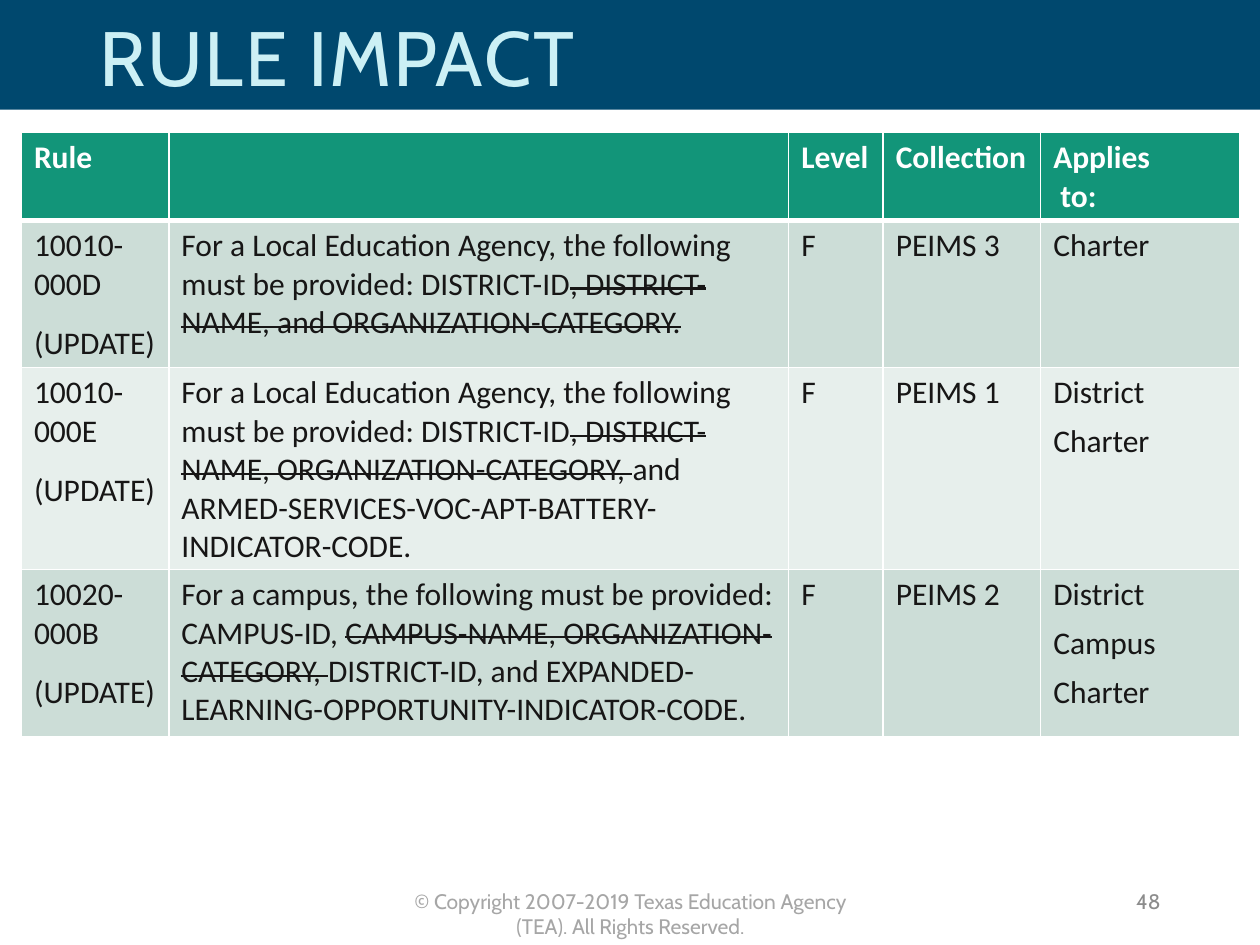
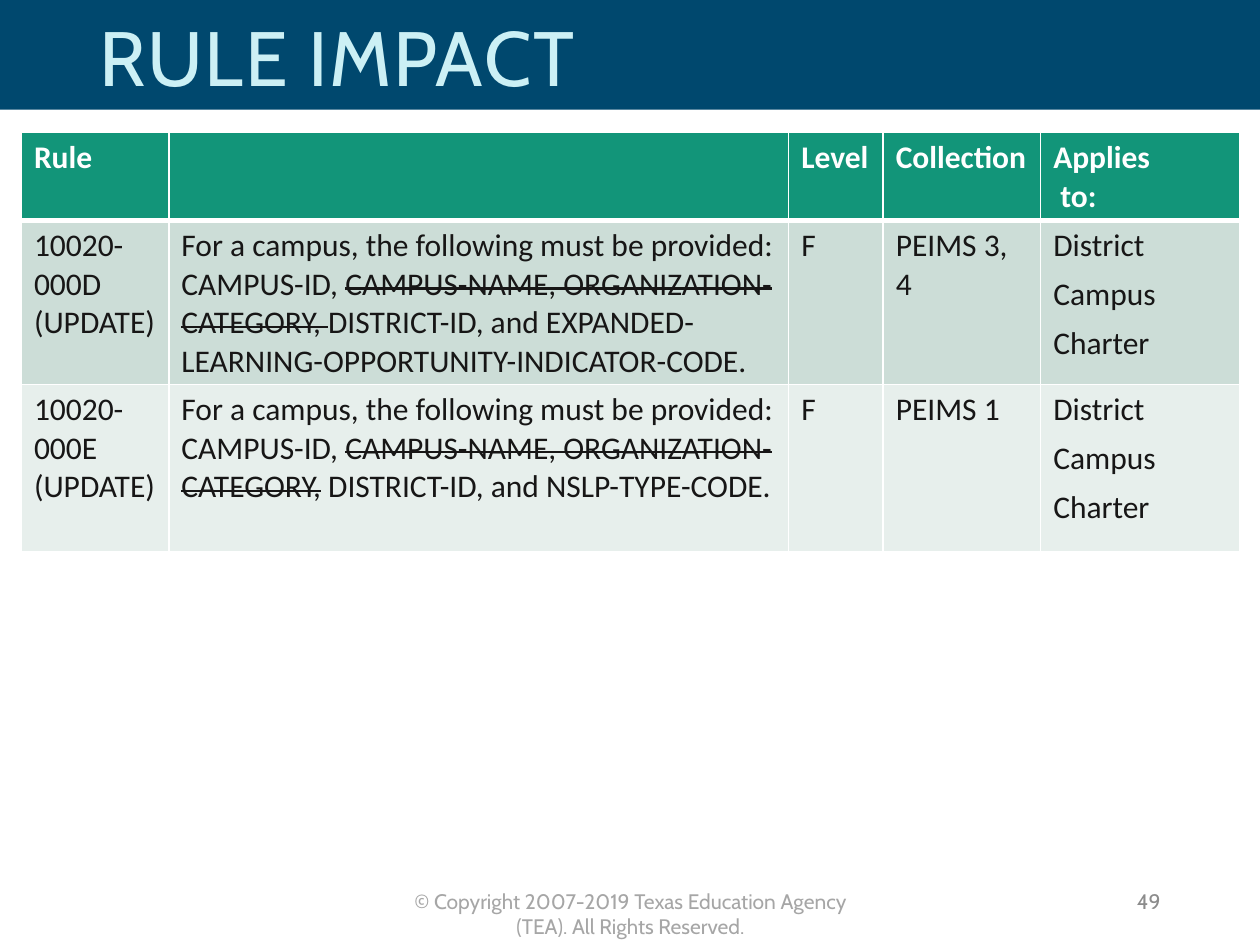
from lxml import etree
from pptx import Presentation
from pptx.dml.color import RGBColor
from pptx.enum import shapes, text
from pptx.oxml import ns
from pptx.util import Inches, Pt

COLORS = {
    "band": "00486E", "title": "CCF0F5", "header": "129579", "white": "FFFFFF",
    "body": "171616", "odd_row": "CCDDD7", "even_row": "E7EFEC",
    "copyright": "A6A6A6", "number": "8C8C8C",
}
DISPLAY_FONT, TABLE_FONT = "Cabin", "Calibri"

# Boxes are left, top, width, height in inches
BAND_BOX = (0, 0, 10, 0.87)
TITLE_BOX = (0.69, 0.05, 8, 0.87)
COPYRIGHT_BOX = (3.04, 7, 3.93, 0.3)
NUMBER_BOX = (7.06, 6.95, 2.25, 0.4)
TABLE_BOX = (0.17, 1.05, 9.67)
COLUMN_WIDTHS = (1.17, 4.92, 0.75, 1.25, 1.58)
HEADER_HEIGHT = 0.57

TITLE = "RULE IMPACT"
COPYRIGHT = "© Copyright 2007-2019 Texas Education Agency (TEA). All Rights Reserved."
HEADERS = ("Rule", "", "Level", "Collection", "Applies\n to:")

# Text between ~ marks is struck through; each newline starts a paragraph
AGENCY = "For a Local Education Agency, the following must be provided: DISTRICT-ID"
CAMPUS = "For a campus, the following must be provided: CAMPUS-ID, "
EXPANDED = (CAMPUS + "~CAMPUS-NAME, ORGANIZATION-CATEGORY, ~DISTRICT-ID, and "
            "EXPANDED-LEARNING-OPPORTUNITY-INDICATOR-CODE.")
ALL_LEVELS = "District\nCampus\nCharter"

# Each slide: number, space around the rule's paragraphs, row heights, rows
SLIDES = (
    (48, 6, (1.05, 1.33, 1.33), (
        ("10010-000D\n(UPDATE)",
         AGENCY + "~, DISTRICT-NAME, and ORGANIZATION-CATEGORY.~",
         "F", "PEIMS 3", "Charter"),
        ("10010-000E\n(UPDATE)",
         AGENCY + "~, DISTRICT-NAME, ORGANIZATION-CATEGORY, ~and "
         "ARMED-SERVICES-VOC-APT-BATTERY-INDICATOR-CODE.",
         "F", "PEIMS 1", "District\nCharter"),
        ("10020-000B\n(UPDATE)", EXPANDED, "F", "PEIMS 2", ALL_LEVELS),
    )),
    (49, 0, (1.05, 1.33), (
        ("10020-000D\n(UPDATE)", EXPANDED, "F", "PEIMS 3, 4", ALL_LEVELS),
        ("10020-000E\n(UPDATE)",
         CAMPUS + "~CAMPUS-NAME, ORGANIZATION-CATEGORY,~ DISTRICT-ID, and NSLP-TYPE-CODE.",
         "F", "PEIMS 1", ALL_LEVELS),
    )),
)


def rgb(name):
    return RGBColor.from_string(COLORS[name])


def write_text(frame, content, *, size, font, color, bold=False, align=None,
               before=0, after=0, line_spacing=None, tracking=None):
    """Fill a text frame, one paragraph per line."""
    for index, line in enumerate(content.split("\n")):
        paragraph = frame.add_paragraph() if index else frame.paragraphs[0]
        paragraph.alignment = align
        paragraph.space_before = Pt(before if index else 0)
        paragraph.space_after = Pt(after)
        if line_spacing:
            paragraph.line_spacing = line_spacing
        for position, piece in enumerate(line.split("~")):
            if not piece:
                continue
            run = paragraph.add_run()
            run.text = piece
            run.font.size, run.font.name, run.font.bold = Pt(size), font, bold
            run.font.color.rgb = rgb(color)
            properties = run._r.get_or_add_rPr()
            if position % 2:
                properties.set("strike", "sngStrike")
            if tracking:
                properties.set("spc", str(tracking * 100))


def add_text(slide, box, content, *, anchor=text.MSO_ANCHOR.TOP, grow=False, **style):
    frame = slide.shapes.add_textbox(*map(Inches, box)).text_frame
    frame.word_wrap = True
    frame.vertical_anchor = anchor
    if grow:
        frame.auto_size = text.MSO_AUTO_SIZE.SHAPE_TO_FIT_TEXT
    write_text(frame, content, font=DISPLAY_FONT, **style)


def add_title_band(slide, band_box, title_box):
    band = slide.shapes.add_shape(shapes.MSO_SHAPE.RECTANGLE, *map(Inches, band_box))
    band.shadow.inherit = False
    band.fill.solid()
    band.fill.fore_color.rgb = rgb("band")
    band.line.fill.background()
    add_text(slide, title_box, TITLE, size=44, color="title", tracking=1,
             line_spacing=0.9, anchor=text.MSO_ANCHOR.MIDDLE)


def add_footer(slide, copyright_box, number_box, number):
    add_text(slide, copyright_box, COPYRIGHT, size=12, color="copyright",
             align=text.PP_ALIGN.CENTER, grow=True)
    add_text(slide, number_box, str(number), size=12, color="number",
             align=text.PP_ALIGN.RIGHT, anchor=text.MSO_ANCHOR.MIDDLE)


def format_cell(cell, fill, top=1, bottom=1):
    """Draw white borders, then the fill, in the order the schema asks for."""
    properties = cell._tc.get_or_add_tcPr()
    for side, width in (("L", 1), ("R", 1), ("T", top), ("B", bottom)):
        line = etree.SubElement(properties, ns.qn(f"a:ln{side}"), w=str(Pt(width)))
        solid = etree.SubElement(line, ns.qn("a:solidFill"))
        etree.SubElement(solid, ns.qn("a:srgbClr"), val=COLORS["white"])
    cell.fill.solid()
    cell.fill.fore_color.rgb = rgb(fill)


def add_rule_table(slide, box, row_heights, rows, rule_space):
    heights = (HEADER_HEIGHT, *row_heights)
    left, top, width = box
    table = slide.shapes.add_table(
        len(heights), len(COLUMN_WIDTHS),
        *map(Inches, (left, top, width, sum(heights)))).table
    table.horz_banding = False
    for column, column_width in zip(table.columns, COLUMN_WIDTHS):
        column.width = Inches(column_width)
    for row, height in zip(table.rows, heights):
        row.height = Inches(height)

    # Header row
    for cell, label in zip(table.rows[0].cells, HEADERS):
        format_cell(cell, "header", bottom=3)
        write_text(cell.text_frame, label, size=18, font=TABLE_FONT,
                   color="white", bold=True)

    # Banded rule rows
    for row_index, values in enumerate(rows, start=1):
        fill = "odd_row" if row_index % 2 else "even_row"
        for column_index, value in enumerate(values):
            cell = table.cell(row_index, column_index)
            format_cell(cell, fill, top=3 if row_index == 1 else 1)
            is_rule = column_index == 0
            write_text(cell.text_frame, value, size=18, font=TABLE_FONT, color="body",
                       before=rule_space if is_rule else 0,
                       after=rule_space if is_rule else 6)


def add_rule_slide(presentation, number, rule_space, row_heights, rows):
    slide = presentation.slides.add_slide(presentation.slide_layouts[6])
    add_title_band(slide, BAND_BOX, TITLE_BOX)
    add_rule_table(slide, TABLE_BOX, row_heights, rows, rule_space)
    add_footer(slide, COPYRIGHT_BOX, NUMBER_BOX, number)


def main():
    presentation = Presentation()
    presentation.slide_width, presentation.slide_height = Inches(10), Inches(7.5)
    for content in SLIDES:
        add_rule_slide(presentation, *content)
    presentation.save("out.pptx")


if __name__ == "__main__":
    main()
